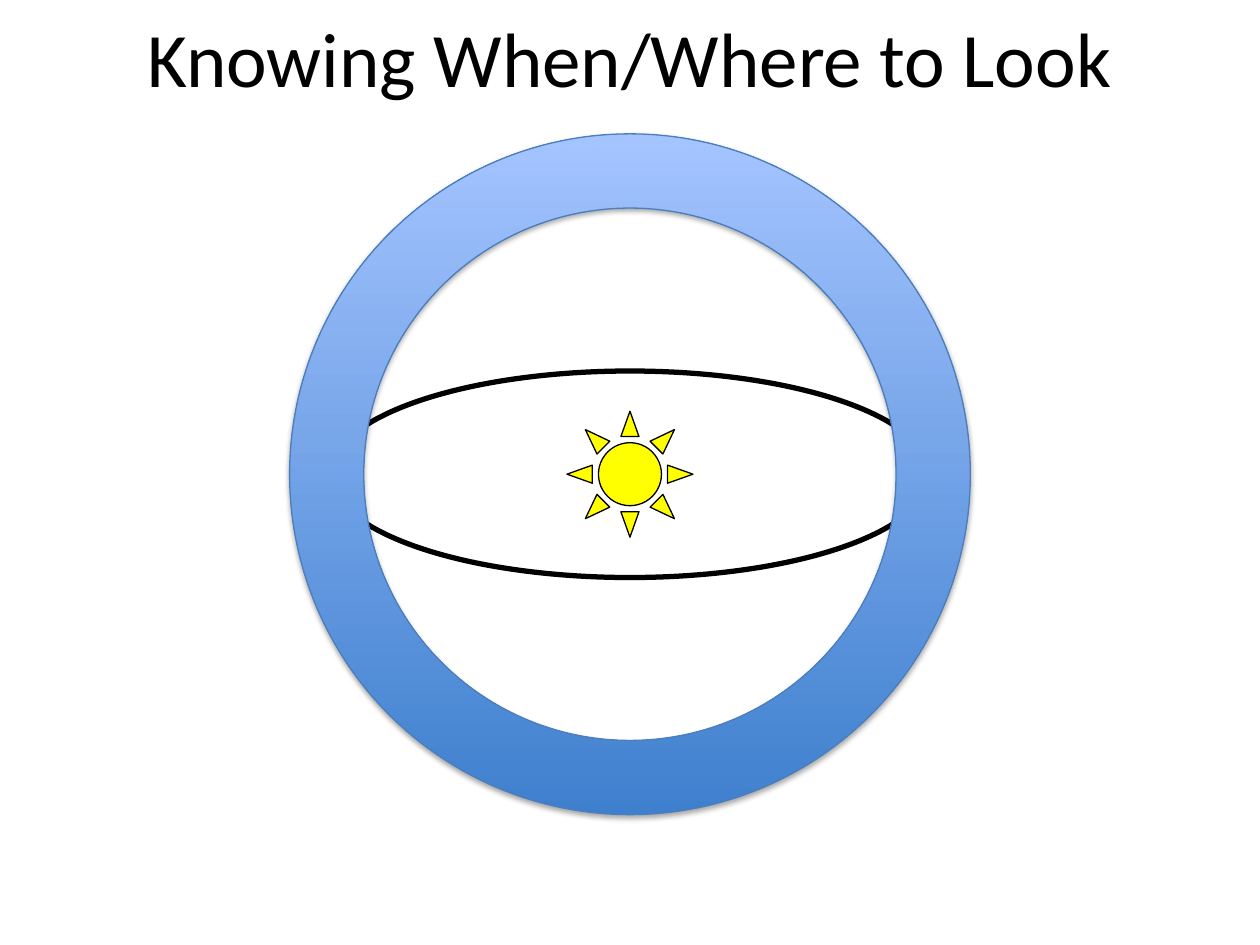
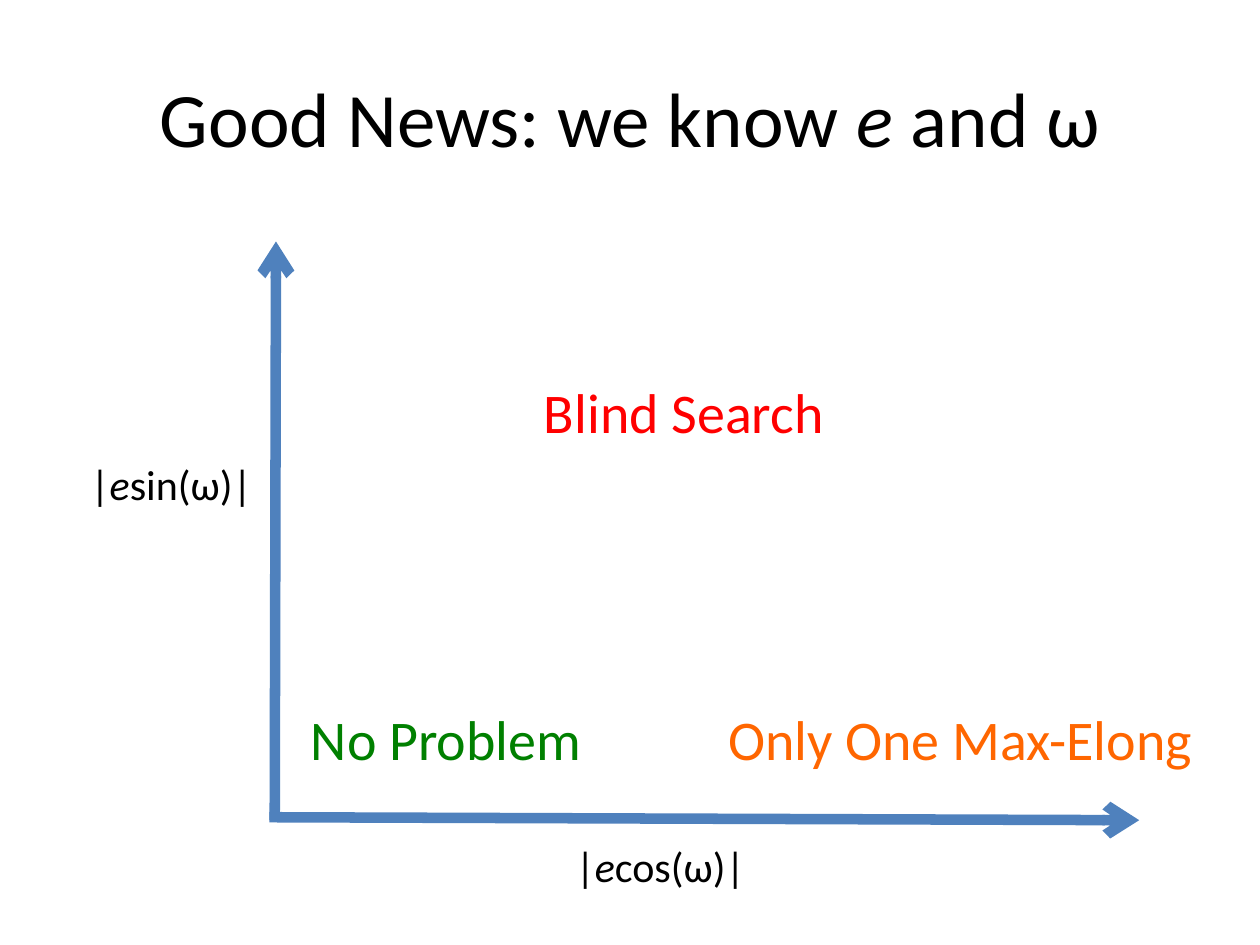
"""Builds two slides on when and where to look for a companion of a star."""
from lxml import etree
from pptx import Presentation
from pptx.dml.color import RGBColor
from pptx.enum.shapes import MSO_CONNECTOR, MSO_SHAPE
from pptx.enum.text import MSO_ANCHOR, MSO_AUTO_SIZE, PP_ALIGN
from pptx.oxml.ns import qn
from pptx.util import Pt

STRAIGHT = MSO_CONNECTOR.STRAIGHT
SUN, OVAL, DONUT = MSO_SHAPE.SUN, MSO_SHAPE.OVAL, MSO_SHAPE.DONUT
MIDDLE, CENTER, LEFT = MSO_ANCHOR.MIDDLE, PP_ALIGN.CENTER, PP_ALIGN.LEFT
GROW = MSO_AUTO_SIZE.SHAPE_TO_FIT_TEXT

FONT = "Calibri"
COLORS = {
    "black": "000000",
    "sun": "FFFF00",
    "ring_dark": "3F80CE",
    "ring_light": "A4C4FF",
    "ring_edge": "4B7EBC",
    "axis": "4F81BD",
    "good": "008000",
    "fair": "FF6600",
    "bad": "FF0000",
}


def rgb(name):
    return RGBColor.from_string(COLORS[name])


class Deck:
    def __init__(self):
        self.presentation = Presentation()
        self.presentation.slide_width = Pt(720)
        self.presentation.slide_height = Pt(540)
        self.slide = None

    def new_slide(self, title, top, height):
        layout = self.presentation.slide_layouts[6]
        self.slide = self.presentation.slides.add_slide(layout)
        frame = self.text(title, 36, top, 648, height, 44, align=CENTER)
        frame.word_wrap = True
        frame.vertical_anchor = MIDDLE

    def text(self, content, left, top, width, height, size, color="black", align=LEFT):
        box = self.slide.shapes.add_textbox(Pt(left), Pt(top), Pt(width), Pt(height))
        frame = box.text_frame
        paragraph = frame.paragraphs[0]
        paragraph.alignment = align
        for index, part in enumerate(content.split("*")):
            run = paragraph.add_run()
            run.text = part
            run.font.name = FONT
            run.font.size = Pt(size)
            run.font.italic = index % 2 == 1
            run.font.color.rgb = rgb(color)
        return frame

    def label(self, content, left, top, width, height, size, color="black"):
        frame = self.text(content, left, top, width, height, size, color)
        frame.word_wrap = False
        frame.auto_size = GROW

    def centered_shape(self, kind, center, width, height, line, line_width, fill=None):
        x, y = center
        shape = self.slide.shapes.add_shape(
            kind, Pt(x - width / 2), Pt(y - height / 2), Pt(width), Pt(height))
        shape.shadow.inherit = False
        shape.line.color.rgb = rgb(line)
        shape.line.width = Pt(line_width)
        if fill:
            shape.fill.solid()
            shape.fill.fore_color.rgb = rgb(fill)
        else:
            shape.fill.background()
        return shape

    def ring(self, center, diameter, thickness):
        shape = self.centered_shape(DONUT, center, diameter, diameter, "ring_edge", 0.75)
        shape.adjustments[0] = thickness
        shape.fill.gradient()
        shape.fill.gradient_angle = 90
        for stop, color in zip(shape.fill.gradient_stops, ("ring_dark", "ring_light")):
            stop.color.rgb = rgb(color)
        effects = shape.element.spPr.find(qn("a:effectLst"))
        shadow = etree.SubElement(
            effects, qn("a:outerShdw"), blurRad=str(Pt(3.1)), dist=str(Pt(1.8)),
            dir="5400000", rotWithShape="0")
        shade = etree.SubElement(shadow, qn("a:srgbClr"), val=COLORS["black"])
        etree.SubElement(shade, qn("a:alpha"), val="35000")

    def arrow(self, start, end):
        connector = self.slide.shapes.add_connector(
            STRAIGHT, *(Pt(value) for value in (*start, *end)))
        connector.line.color.rgb = rgb("axis")
        connector.line.width = Pt(6)
        line = connector.line._get_or_add_ln()
        etree.SubElement(line, qn("a:tailEnd"), type="arrow")
        etree.SubElement(connector.element.spPr, qn("a:effectLst"))


def build_orbit_slide(deck):
    deck.new_slide("Knowing When/Where to Look", 0, 64.8)
    star = (360, 271)
    deck.centered_shape(SUN, star, 72, 72, "black", 0.75, "sun")
    deck.centered_shape(OVAL, star, 343, 118, "black", 3)
    deck.ring(star, 389, 0.109)


def build_search_slide(deck):
    deck.new_slide("Good News: we know *e* and ω", 21.6, 90)
    deck.arrow((154, 467), (651, 468.7))
    deck.arrow((157, 468.7), (157.7, 138))
    deck.label("|*e*sin(ω)|", 44.6, 258.5, 112.3, 36, 24)
    deck.label("|*e*cos(ω)|", 321.8, 476.6, 116.6, 36, 24)
    regions = (
        ("No Problem", 170.6, 399, 170.6, "good"),
        ("Only One Max-Elong", 409, 399, 282.2, "fair"),
        ("Blind Search", 303.8, 212.4, 175.7, "bad"),
    )
    for name, left, top, width, color in regions:
        deck.label(name, left, top, width, 46, 32, color)


def main():
    deck = Deck()
    build_orbit_slide(deck)
    build_search_slide(deck)
    deck.presentation.save("out.pptx")


if __name__ == "__main__":
    main()
